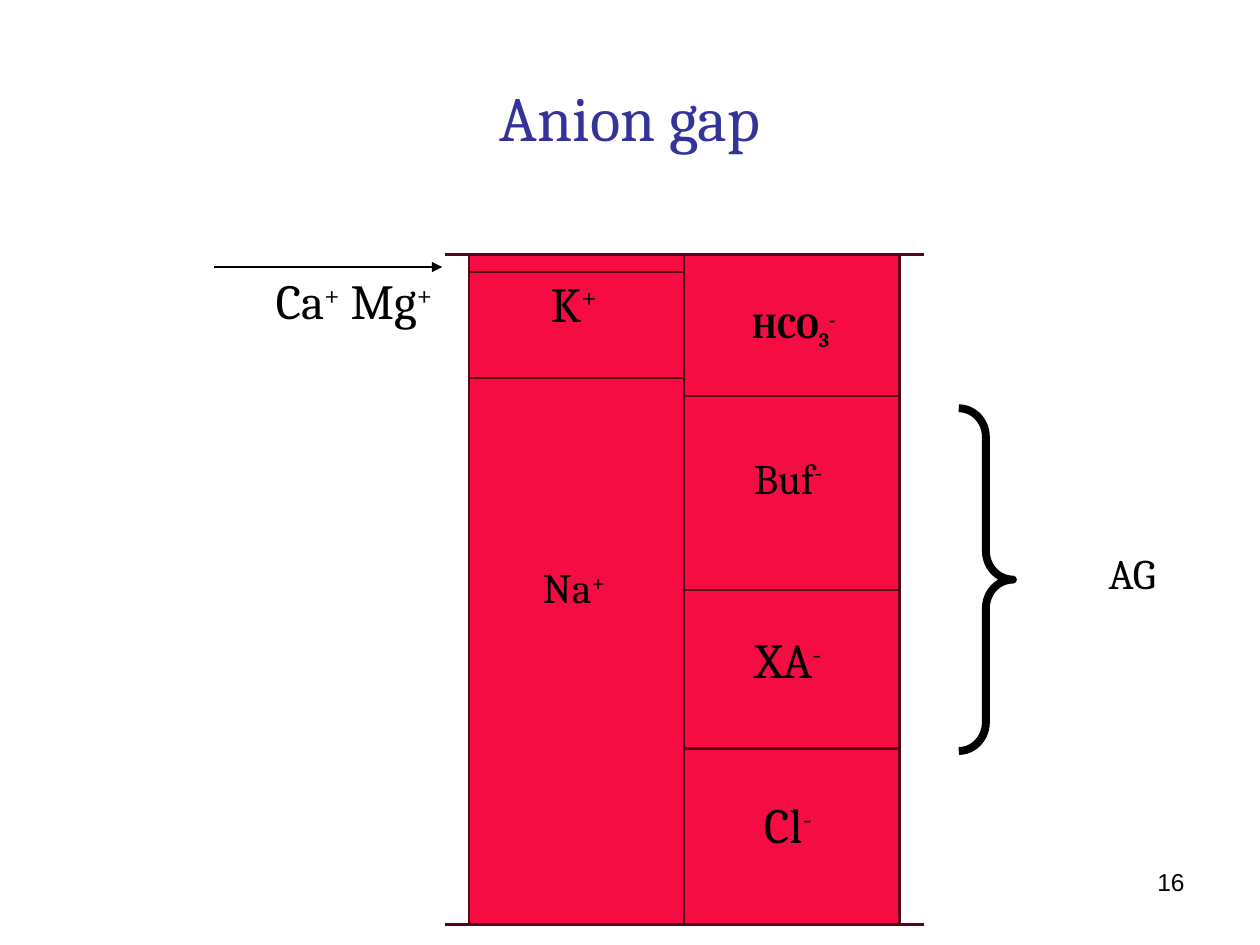
from lxml import etree
from pptx import Presentation
from pptx.dml.color import RGBColor
from pptx.enum import shapes as sh, text as tx
from pptx.oxml.ns import qn
from pptx.util import Inches, Pt

BLACK, RED, EDGE, TITLE = "000000", "F40C43", "580418", "333399"
LEFT, MID, RIGHT = 3.72, 5.43, 7.14
TOP, BASE = 2.02, 7.34
OVER = 0.19
RAISE = {"^": "30000", "_": "-25000"}
ALIGN = {"l": tx.PP_ALIGN.LEFT, "c": tx.PP_ALIGN.CENTER, "r": tx.PP_ALIGN.RIGHT}


def rgb(code):
    return RGBColor.from_string(code)


def box(*sizes):
    return [Inches(size) for size in sizes]


def write(frame, parts, size, align="c", color=BLACK, face="Cambria", bold=False):
    """Fill a frame with runs; a part led by ^ is raised, by _ lowered."""
    para = frame.paragraphs[0]
    para.alignment = ALIGN[align]
    for part in parts:
        shift = RAISE.get(part[0])
        run = para.add_run()
        run.text = part[1:] if shift else part
        for name, value in {"size": Pt(size), "name": face, "bold": bold}.items():
            setattr(run.font, name, value)
        run.font.color.rgb = rgb(color)
        if shift:
            run.font._element.set("baseline", shift)


def label(slide, at, parts, size, wrap=True, **style):
    frame = slide.shapes.add_textbox(*box(*at)).text_frame
    frame.word_wrap = wrap
    write(frame, parts, size, **style)


def stroke(item, color, width):
    item.line.color.rgb = rgb(color)
    item.line.width = Pt(width)


def rule(shapes, start, end, color=EDGE, width=1.25, arrow=False):
    line = shapes.add_connector(sh.MSO_CONNECTOR.STRAIGHT, *box(*start, *end))
    stroke(line, color, width)
    props = line._element.spPr
    if arrow:
        etree.SubElement(line.line._get_or_add_ln(), qn("a:tailEnd"), type="triangle")
    etree.SubElement(props, qn("a:effectLst"))


def column(shapes, left, right, cuts):
    """Draw one ion column, split at the given heights."""
    bar = shapes.add_shape(sh.MSO_SHAPE.RECTANGLE,
                           *box(left, TOP, right - left, BASE - TOP))
    bar.shadow.inherit = False
    bar.fill.solid()
    bar.fill.fore_color.rgb = rgb(RED)
    stroke(bar, EDGE, 1.25)
    for y in cuts:
        rule(shapes, (left, y), (right, y))


def brace(slide, at):
    item = slide.shapes.add_shape(sh.MSO_SHAPE.RIGHT_BRACE, *box(*at))
    item.shadow.inherit = False
    item.adjustments[0] = 0.53
    item.adjustments[1] = 0.5
    item.fill.background()
    stroke(item, BLACK, 4.5)


def heading(slide, words):
    title = slide.shapes.title
    title.left, title.top, title.width, title.height = box(0.5, 0.3, 9, 1.25)
    title.text_frame.vertical_anchor = tx.MSO_ANCHOR.MIDDLE
    write(title.text_frame, [words], 36, color=TITLE)


def main():
    deck = Presentation()
    deck.slide_width, deck.slide_height = box(10, 7.5)
    slide = deck.slides.add_slide(deck.slide_layouts[5])
    heading(slide, "Anion gap")
    label(slide, (7.17, 6.83, 2.33, 0.52), ["16"], 14, align="r", face="Arial")
    label(slide, (0.43, 2.1, 3.1, 0.57), ["Ca", "^+", " Mg", "^+"], 28, align="r")

    chart = slide.shapes.add_group_shape().shapes
    column(chart, LEFT, MID, [2.16, 3])
    column(chart, MID, RIGHT, [3.14, 4.68, 5.94])
    for y in (TOP, BASE):
        rule(chart, (LEFT - OVER, y), (RIGHT + OVER, y), width=1.5)

    rule(slide.shapes, (1.7, 2.12), (3.51, 2.12), BLACK, 1.5, arrow=True)
    label(slide, (5.77, 2.36, 1.06, 0.43), ["HCO", "_3", "^-"], 20,
          wrap=False, bold=True)
    ions = [
        (5.36, 3.54, "Buf", "^-", 24),
        (5.36, 4.95, "XA", "^-", 28),
        (5.36, 6.26, "Cl", "^-", 28),
        (3.66, 4.41, "Na", "^+", 24),
        (3.66, 2.12, "K", "^+", 28),
    ]
    for x, y, name, charge, size in ions:
        label(slide, (x, y, 1.79, 0.57 if size == 28 else 0.5), [name, charge], size)

    brace(slide, (7.61, 3.24, 0.43, 2.72))
    label(slide, (8.07, 4.3, 1.83, 0.5), ["AG"], 24)
    deck.save("out.pptx")


if __name__ == "__main__":
    main()
